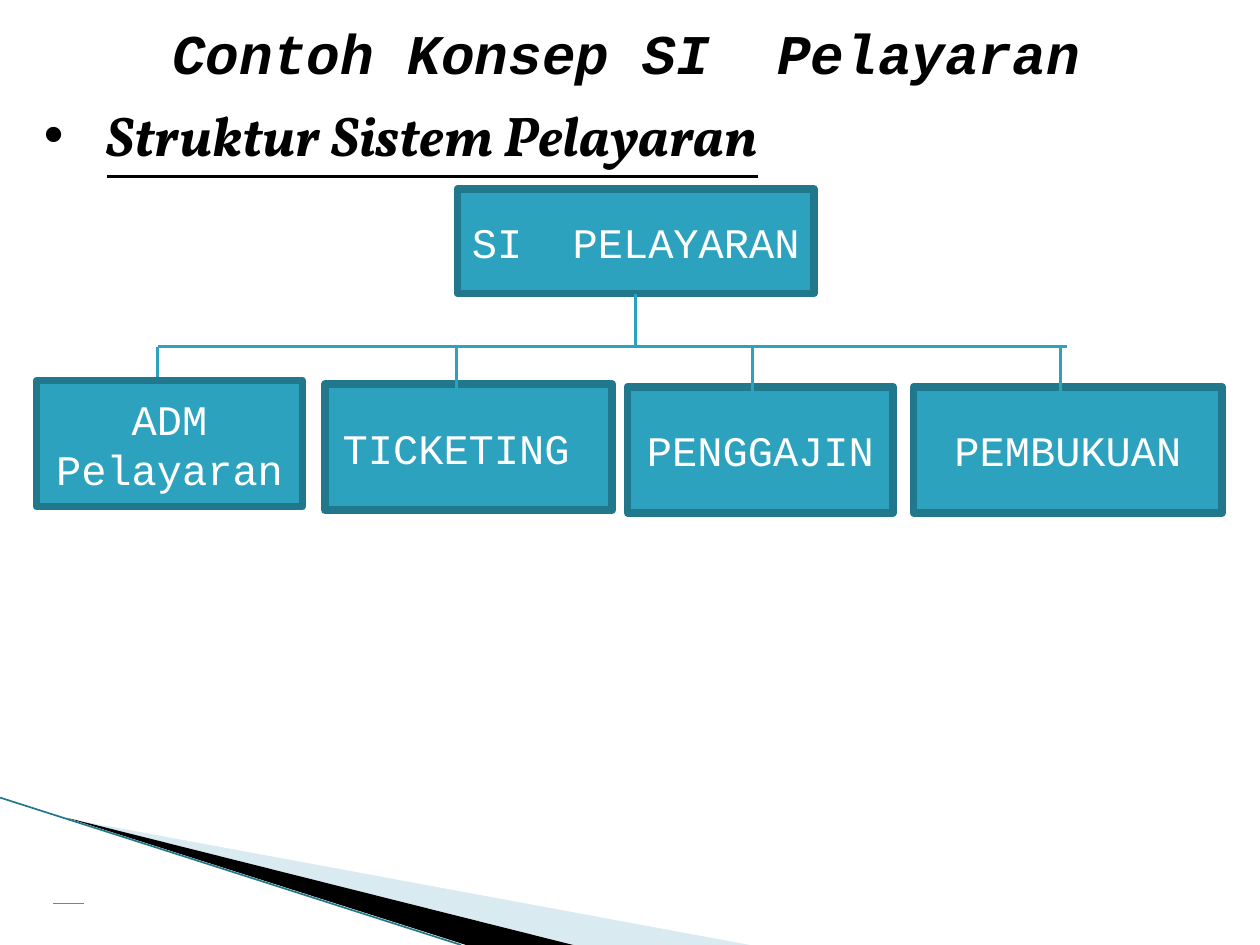
import pptx
import pptx.util
import pptx.dml.color
import pptx.enum.shapes
import pptx.enum.text
import pptx.oxml.ns
from lxml import etree

Inches, Pt = pptx.util.Inches, pptx.util.Pt
MONO, SERIF = "Courier New", "Vollkorn"
TEAL, DARK, PALE = "2DA2BF", "21788D", "A0CBDC"
BLACK, WHITE = "000000", "FFFFFF"


def color(code):
    return pptx.dml.color.RGBColor.from_string(code)


def add_tag(parent, name, **attrs):
    return etree.SubElement(parent, pptx.oxml.ns.qn(name), attrs)


class Deck:
    """Holds the current slide and draws in the house style."""

    def __init__(self, slide):
        self.slide = slide
        self.shapes = slide.shapes

    def wedge(self, points, fill, alpha=None):
        """Draw a borderless polygon; alpha is opacity in percent."""
        pts = [(Inches(x), Inches(y)) for x, y in points]
        path = self.shapes.build_freeform(*pts[0])
        path.add_line_segments(pts[1:], close=True)
        shape = path.convert_to_shape()
        shape.shadow.inherit = False
        shape.fill.solid()
        shape.fill.fore_color.rgb = color(fill)
        shape.line.fill.background()
        if alpha:
            clr = shape.fill._xPr.find(".//" + pptx.oxml.ns.qn("a:srgbClr"))
            add_tag(clr, "a:alpha", val=str(alpha * 1000))

    def line(self, x1, y1, x2, y2, width=1.75, tint=TEAL):
        link = self.shapes.add_connector(
            pptx.enum.shapes.MSO_CONNECTOR.STRAIGHT,
            Inches(x1), Inches(y1), Inches(x2), Inches(y2))
        link.line.color.rgb = color(tint)
        link.line.width = Pt(width)
        add_tag(link._element.spPr, "a:effectLst")
        return link

    def run(self, para, text, size, font, tint):
        run = para.add_run()
        run.text = text
        run.font.size = Pt(size)
        run.font.name = font
        run.font.color.rgb = color(tint)
        return run

    def box(self, text, left, top, width, height=1):
        shape = self.shapes.add_shape(
            pptx.enum.shapes.MSO_SHAPE.RECTANGLE,
            Inches(left), Inches(top), Inches(width), Inches(height))
        shape.shadow.inherit = False
        shape.fill.solid()
        shape.fill.fore_color.rgb = color(TEAL)
        shape.line.color.rgb = color(DARK)
        shape.line.width = Pt(4.33)
        frame = shape.text_frame
        frame.word_wrap = True
        frame.vertical_anchor = pptx.enum.text.MSO_ANCHOR.MIDDLE
        para = frame.paragraphs[0]
        para.alignment = pptx.enum.text.PP_ALIGN.CENTER
        self.run(para, text, 24, MONO, WHITE)
        return shape

    def head(self, text, left, top, width, font, bullet=False):
        """Add a bold italic heading; a bulleted one is underlined too."""
        frame = self.shapes.add_textbox(
            Inches(left), Inches(top), Inches(width), Inches(0.64)).text_frame
        frame.word_wrap = True
        frame.auto_size = pptx.enum.text.MSO_AUTO_SIZE.SHAPE_TO_FIT_TEXT
        para = frame.paragraphs[0]
        if bullet:
            props = para._p.get_or_add_pPr()
            props.set("marL", str(Inches(0.5)))
            props.set("indent", str(-Inches(0.5)))
            add_tag(props, "a:buFont", typeface="Arial")
            add_tag(props, "a:buChar", char="•")
        run = self.run(para, text, 32, font, BLACK)
        run.font.bold = run.font.italic = True
        if bullet:
            run.font.underline = True


def main():
    prs = pptx.Presentation()
    prs.slide_width, prs.slide_height = Inches(10), Inches(7.5)
    deck = Deck(prs.slides.add_slide(prs.slide_layouts[6]))

    # Corner decoration
    deck.wedge([(0.55, 6.5), (5.95, 7.5), (4.56, 7.5)], PALE, 40)
    deck.wedge([(0.53, 6.49), (4.55, 7.5), (3.7, 7.5)], BLACK)
    deck.line(0, 6.33, 3.66, 7.5, 0.95, DARK)

    # Organisation chart
    rail, drop = 2.75, 3.23
    root = deck.box("SI  PELAYARAN", 3.63, 1.5, 2.83, 0.83)
    deck.box("TICKETING ", 2.58, 3.05, 2.28)
    deck.box("PENGGAJIN", 4.98, 3.07, 2.11)
    deck.box("PEMBUKUAN", 7.25, 3.07, 2.45)
    trunk = deck.line(5.04, 2.33, 5.04, rail)
    trunk.begin_connect(root, 2)
    trunk.end_x = trunk.begin_x
    deck.line(1.25, rail, 8.47, rail)
    for x in (1.25, 3.62, 5.97, 8.42):
        deck.line(x, rail, x, drop)
    deck.box("ADM Pelayaran", 0.29, 3.02, 2.11)

    deck.head("Struktur Sistem Pelayaran", 0.25, 0.75, 8.77, SERIF, bullet=True)
    deck.head("Contoh Konsep SI  Pelayaran", 1.27, 0.1, 8.06, MONO)
    deck.line(0.42, 7.17, 0.67, 7.17, 0.75)

    prs.save("out.pptx")


if __name__ == "__main__":
    main()
